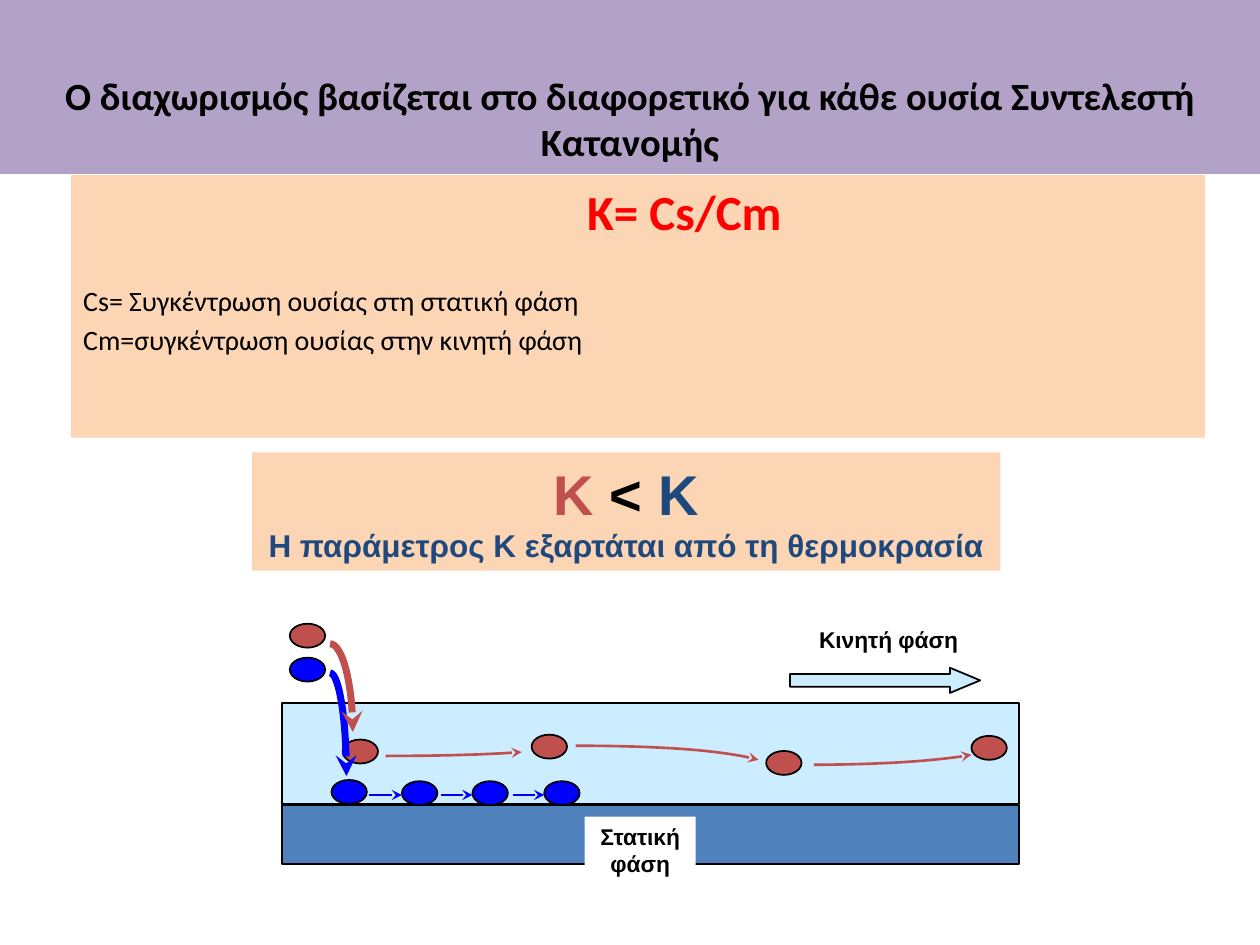
from lxml.etree import SubElement
from pptx import Presentation
from pptx.dml.color import RGBColor
from pptx.enum.shapes import MSO_CONNECTOR, MSO_SHAPE
from pptx.enum.text import MSO_ANCHOR, PP_ALIGN
from pptx.oxml.ns import qn
from pptx.util import Pt

BLACK = RGBColor(0x00, 0x00, 0x00)
WHITE = RGBColor(0xFF, 0xFF, 0xFF)
RED = RGBColor(0xFF, 0x00, 0x00)
BLUE = RGBColor(0x00, 0x00, 0xFF)
BRICK = RGBColor(0xC0, 0x50, 0x4D)
NAVY = RGBColor(0x1F, 0x49, 0x7D)
LILAC = RGBColor(0xB3, 0xA2, 0xC7)
PEACH = RGBColor(0xFC, 0xD5, 0xB5)
STEEL = RGBColor(0x4F, 0x81, 0xBD)
SKY = RGBColor(0xCC, 0xEC, 0xFF)

presentation = Presentation()
presentation.slide_width = Pt(720)
presentation.slide_height = Pt(540)
slide = presentation.slides.add_slide(presentation.slide_layouts[5])
shapes = slide.shapes


def add_filled(kind, left, top, width, height, color, outlined=False):
    shape = shapes.add_shape(kind, Pt(left), Pt(top), Pt(width), Pt(height))
    shape.shadow.inherit = False
    shape.fill.solid()
    shape.fill.fore_color.rgb = color
    if outlined:
        shape.line.color.rgb = BLACK
        shape.line.width = Pt(1)
    else:
        shape.line.fill.background()
    shape.text_frame.word_wrap = True
    return shape


def style_arrow(arrow, color, width):
    arrow.line.color.rgb = color
    arrow.line.width = Pt(width)
    SubElement(arrow.line._get_or_add_ln(), qn("a:tailEnd"), type="stealth")
    if arrow._element.spPr.find(qn("a:effectLst")) is None:
        SubElement(arrow._element.spPr, qn("a:effectLst"))


title = shapes.title
title.left, title.top, title.width, title.height = Pt(0), Pt(0), Pt(720), Pt(99.4)
title.fill.solid()
title.fill.fore_color.rgb = LILAC
title.text_frame.text = "Ο διαχωρισμός βασίζεται στο διαφορετικό για κάθε ουσία Συντελεστή Κατανομής"
title.text_frame.word_wrap = True
title.text_frame.vertical_anchor = MSO_ANCHOR.BOTTOM
title.text_frame.margin_bottom = Pt(5.3)
paragraph = title.text_frame.paragraphs[0]
paragraph.alignment = PP_ALIGN.CENTER
paragraph.font.name = "Calibri"
paragraph.font.size = Pt(22)
paragraph.font.bold = True
paragraph.font.color.rgb = BLACK

definition = add_filled(MSO_SHAPE.RECTANGLE, 40.5, 100.1, 648, 150, PEACH)
definition.text_frame.vertical_anchor = MSO_ANCHOR.TOP
definition.text_frame.text = (
    "Κ= Cs/Cm\n"
    "Cs= Συγκέντρωση ουσίας στη στατική φάση\n"
    "Cm=συγκέντρωση ουσίας στην κινητή φάση"
)
definition_styles = [(28, True, RED, 0), (16, False, BLACK, 25), (16, False, BLACK, 3)]
for paragraph, (size, bold, color, space) in zip(definition.text_frame.paragraphs, definition_styles):
    paragraph.alignment = PP_ALIGN.LEFT
    paragraph.space_before = Pt(space)
    paragraph.font.name = "Calibri"
    paragraph.font.size = Pt(size)
    paragraph.font.bold = bold
    paragraph.font.color.rgb = color
definition.text_frame.paragraphs[0]._p.get_or_add_pPr().set("marL", str(Pt(288)))

add_filled(MSO_SHAPE.RECTANGLE, 161.3, 460, 421.2, 33.8, STEEL, True)
add_filled(MSO_SHAPE.RECTANGLE, 161.3, 401.8, 421.2, 57.6, SKY, True)

brick_dots = [(165.6, 356.4), (195.8, 422.6), (303.8, 419.8), (437.8, 429.1), (555.1, 420.5)]
blue_dots = [(165.6, 375.8), (189.4, 445.7), (229.7, 446.4), (270, 446.4), (311, 446.4)]
for color, dots in [(BRICK, brick_dots), (BLUE, blue_dots)]:
    for left, top in dots:
        add_filled(MSO_SHAPE.OVAL, left, top, 20.2, 13.7, color, True)

curves = [
    (BLUE, 4, [(188.6, 384.5), (193.7, 384.5), (198, 410.4), (198, 443.5)]),
    (BRICK, 4, [(188.6, 367.9), (195.8, 367.9), (201.6, 391), (201.6, 418.3)]),
    (BRICK, 1.5, [(220.3, 432), (249.8, 432), (277.9, 431.3), (298.1, 429.8)]),
    (BRICK, 1.5, [(329, 426.2), (375, 426.2), (412, 428.5), (433.4, 434.2)]),
    (BRICK, 1.5, [(465.1, 437), (501.1, 437), (535.7, 434.9), (555.1, 431.3)]),
]
STEPS = 16
for color, width, controls in curves:
    points = []
    for step in range(STEPS + 1):
        t = step / STEPS
        weights = [(1 - t) ** 3, 3 * t * (1 - t) ** 2, 3 * t ** 2 * (1 - t), t ** 3]
        points.append(tuple(
            Pt(sum(weight * control[axis] for weight, control in zip(weights, controls)))
            for axis in (0, 1)
        ))
    builder = shapes.build_freeform(*points[0])
    builder.add_line_segments(points[1:], close=False)
    curve = builder.convert_to_shape()
    curve.shadow.inherit = False
    curve.fill.background()
    style_arrow(curve, color, width)

for start, end in [(211, 229.7), (252, 270), (293, 311)]:
    hop = shapes.add_connector(MSO_CONNECTOR.STRAIGHT, Pt(start), Pt(454.3), Pt(end), Pt(454.3))
    style_arrow(hop, BLUE, 1.5)

static_label = add_filled(MSO_SHAPE.RECTANGLE, 334.1, 466.6, 63.4, 46.8, WHITE)
static_label.text_frame.text = "Στατική φάση"
mobile_label = shapes.add_textbox(Pt(450), Pt(354.2), Pt(118.8), Pt(28.1))
mobile_label.text_frame.text = "Κινητή φάση"
mobile_label.text_frame.word_wrap = True
mobile_label.text_frame.margin_left = Pt(18)
for label, alignment in [(static_label, PP_ALIGN.CENTER), (mobile_label, PP_ALIGN.LEFT)]:
    label.text_frame.vertical_anchor = MSO_ANCHOR.TOP
    paragraph = label.text_frame.paragraphs[0]
    paragraph.alignment = alignment
    paragraph.font.name = "Arial"
    paragraph.font.size = Pt(13)
    paragraph.font.bold = True
    paragraph.font.color.rgb = BLACK

comparison = add_filled(MSO_SHAPE.RECTANGLE, 144, 258.5, 427.7, 67.7, PEACH)
comparison.text_frame.word_wrap = False
comparison_lines = [
    (32, [("K ", BRICK), ("< ", BLACK), ("K", NAVY)]),
    (18, [("Η παράμετρος Κ εξαρτάται από τη θερμοκρασία", NAVY)]),
]
comparison.text_frame.add_paragraph()
for paragraph, (size, runs) in zip(comparison.text_frame.paragraphs, comparison_lines):
    paragraph.alignment = PP_ALIGN.CENTER
    paragraph.font.name = "Arial"
    paragraph.font.size = Pt(size)
    paragraph.font.bold = True
    for text, color in runs:
        run = paragraph.add_run()
        run.text = text
        run.font.color.rgb = color

flow_arrow = add_filled(MSO_SHAPE.RIGHT_ARROW, 451.4, 381.6, 108.7, 14.4, SKY, True)
flow_arrow.adjustments[0] = 0.5
flow_arrow.adjustments[1] = 1.2

presentation.save("out.pptx")
